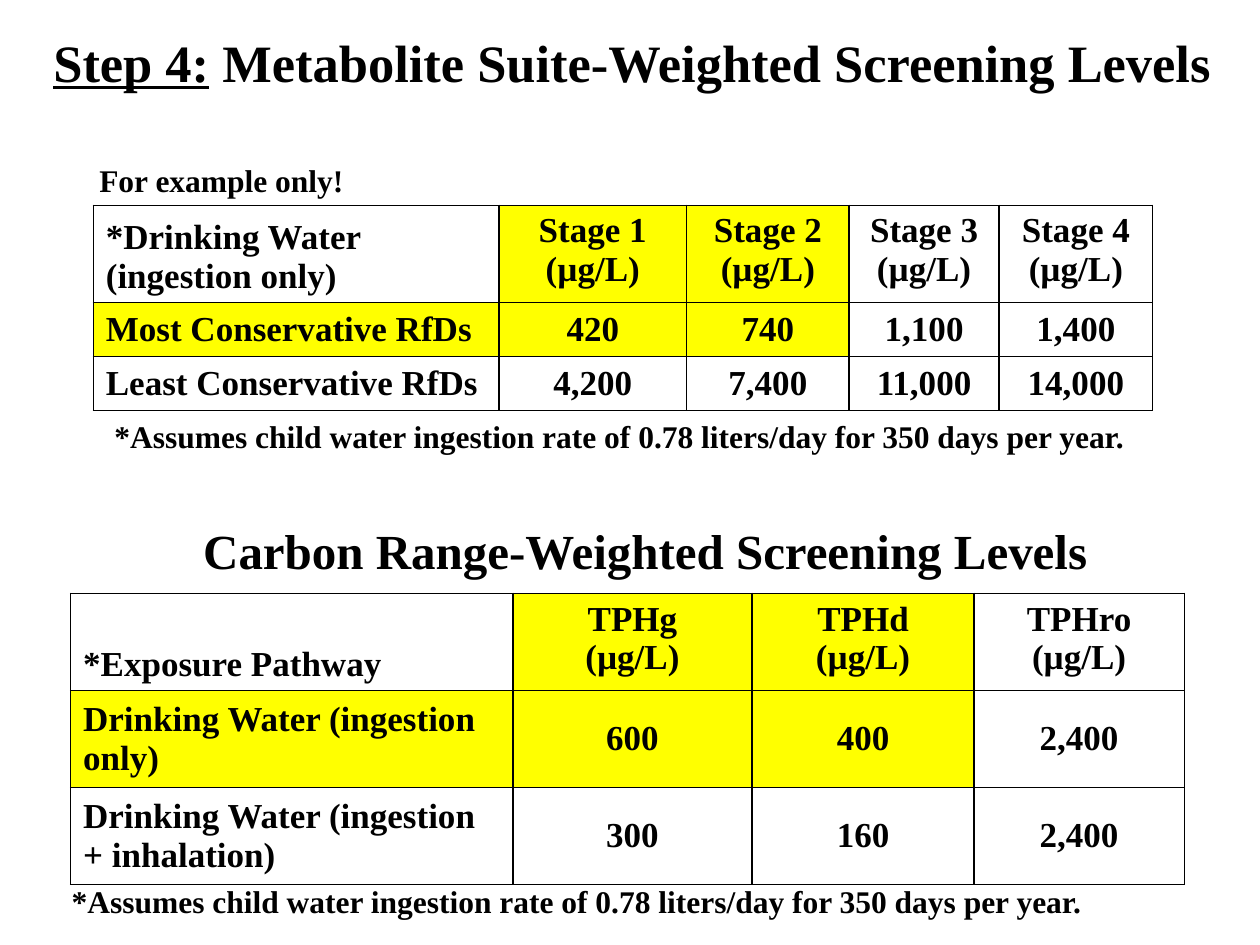
"""Build a slide with two tables of weighted drinking water screening levels."""

from dataclasses import dataclass

from lxml.etree import SubElement
from pptx import Presentation
from pptx.dml.color import RGBColor
from pptx.enum.text import MSO_ANCHOR, MSO_AUTO_SIZE, PP_ALIGN
from pptx.oxml.ns import qn
from pptx.util import Inches, Pt


@dataclass(frozen=True)
class Theme:
    font: str = "Times New Roman"
    ink: RGBColor = RGBColor(0, 0, 0)
    highlight: RGBColor = RGBColor(255, 255, 0)
    border: Pt = Pt(1)
    title: int = 30
    subtitle: int = 28
    cell: int = 20
    note: int = 18


@dataclass(frozen=True)
class Label:
    text: str
    left: float
    top: float
    width: float
    height: float
    size: int
    align: PP_ALIGN = PP_ALIGN.LEFT
    underlined: str = ""


@dataclass(frozen=True)
class LevelTable:
    left: float
    top: float
    columns: tuple[float, ...]
    rows: tuple[float, ...]
    cells: tuple[tuple[str, ...], ...]


THEME = Theme()
UNIT = "(µg/L)"
ASSUMPTION = "*Assumes child water ingestion rate of 0.78 liters/day for 350 days per year."

LABELS = (
    Label(" Metabolite Suite-Weighted Screening Levels", 0.04, 0.18, 9.96, 0.61,
          THEME.title, PP_ALIGN.CENTER, "Step 4:"),
    Label("For example only!", 0.69, 1.23, 2.4, 0.4, THEME.note),
    Label(ASSUMPTION, 0.81, 3.26, 8.25, 0.4, THEME.note),
    Label("Carbon Range-Weighted Screening Levels", 0.31, 4.08, 9.62, 0.57,
          THEME.subtitle, PP_ALIGN.CENTER),
    Label(ASSUMPTION, 0.47, 6.95, 8.25, 0.4, THEME.note),
)

TABLES = (
    LevelTable(0.74, 1.63, (3.22, 1.49, 1.29, 1.19, 1.22), (0.77, 0.43, 0.43), (
        ("*Drinking Water\n(ingestion only)",
         *(f"Stage {stage}\n{UNIT}" for stage in range(1, 5))),
        ("Most Conservative RfDs", "420", "740", "1,100", "1,400"),
        ("Least Conservative RfDs", "4,200", "7,400", "11,000", "14,000"),
    )),
    LevelTable(0.56, 4.71, (3.51, 1.9, 1.76, 1.67), (0.77, 0.77, 0.77), (
        ("*Exposure Pathway",
         *(f"{fraction}\n{UNIT}" for fraction in ("TPHg", "TPHd", "TPHro"))),
        ("Drinking Water (ingestion only)", "600", "400", "2,400"),
        ("Drinking Water (ingestion + inhalation)", "300", "160", "2,400"),
    )),
)


def format_text(text_frame, size: int, align: PP_ALIGN) -> None:
    """Apply the theme font and an alignment to every paragraph."""
    for paragraph in text_frame.paragraphs:
        paragraph.alignment = align
        for run in paragraph.runs:
            run.font.name = THEME.font
            run.font.size = Pt(size)
            run.font.bold = True
            run.font.color.rgb = THEME.ink


def add_label(slide, label: Label) -> None:
    """Add one text box, with an optional underlined lead."""
    shape = slide.shapes.add_textbox(Inches(label.left), Inches(label.top),
                                     Inches(label.width), Inches(label.height))
    text_frame = shape.text_frame
    text_frame.word_wrap = True
    text_frame.auto_size = MSO_AUTO_SIZE.SHAPE_TO_FIT_TEXT
    text_frame.vertical_anchor = MSO_ANCHOR.MIDDLE
    paragraph = text_frame.paragraphs[0]
    if label.underlined:
        lead = paragraph.add_run()
        lead.text = label.underlined
        lead.font.underline = True
    paragraph.add_run().text = label.text
    format_text(text_frame, label.size, label.align)


def add_borders(cell) -> None:
    """Draw a solid line on all four sides of a cell."""
    properties = cell._tc.get_or_add_tcPr()
    for side in ("a:lnL", "a:lnR", "a:lnT", "a:lnB"):
        line = SubElement(properties, qn(side), w=str(THEME.border))
        fill = SubElement(line, qn("a:solidFill"))
        SubElement(fill, qn("a:srgbClr"), val=str(THEME.ink))


def format_cell(cell, row: int, column: int) -> None:
    """Style a cell by its place in the table."""
    add_borders(cell)
    if row < 2 and column < 3 and row + column > 0:
        cell.fill.solid()
        cell.fill.fore_color.rgb = THEME.highlight
    else:
        cell.fill.background()
    if row > 0:
        cell.vertical_anchor = MSO_ANCHOR.MIDDLE
    else:
        cell.vertical_anchor = MSO_ANCHOR.TOP if column else MSO_ANCHOR.BOTTOM
    format_text(cell.text_frame, THEME.cell,
                PP_ALIGN.CENTER if column else PP_ALIGN.LEFT)


def add_level_table(slide, levels: LevelTable) -> None:
    """Add one table of screening levels."""
    table = slide.shapes.add_table(
        len(levels.rows), len(levels.columns), Inches(levels.left), Inches(levels.top),
        Inches(sum(levels.columns)), Inches(sum(levels.rows))).table
    table.first_row = False
    table.horz_banding = False
    for column, width in zip(table.columns, levels.columns):
        column.width = Inches(width)
    for row, height in zip(table.rows, levels.rows):
        row.height = Inches(height)
    for row_index, texts in enumerate(levels.cells):
        for column_index, text in enumerate(texts):
            cell = table.cell(row_index, column_index)
            cell.text_frame.text = text
            format_cell(cell, row_index, column_index)


def main() -> None:
    """Build and save the presentation."""
    presentation = Presentation()
    presentation.slide_width = Inches(10)
    presentation.slide_height = Inches(7.5)
    slide = presentation.slides.add_slide(presentation.slide_layouts[6])
    for levels in TABLES:
        add_level_table(slide, levels)
    for label in LABELS:
        add_label(slide, label)
    presentation.save("out.pptx")


if __name__ == "__main__":
    main()
